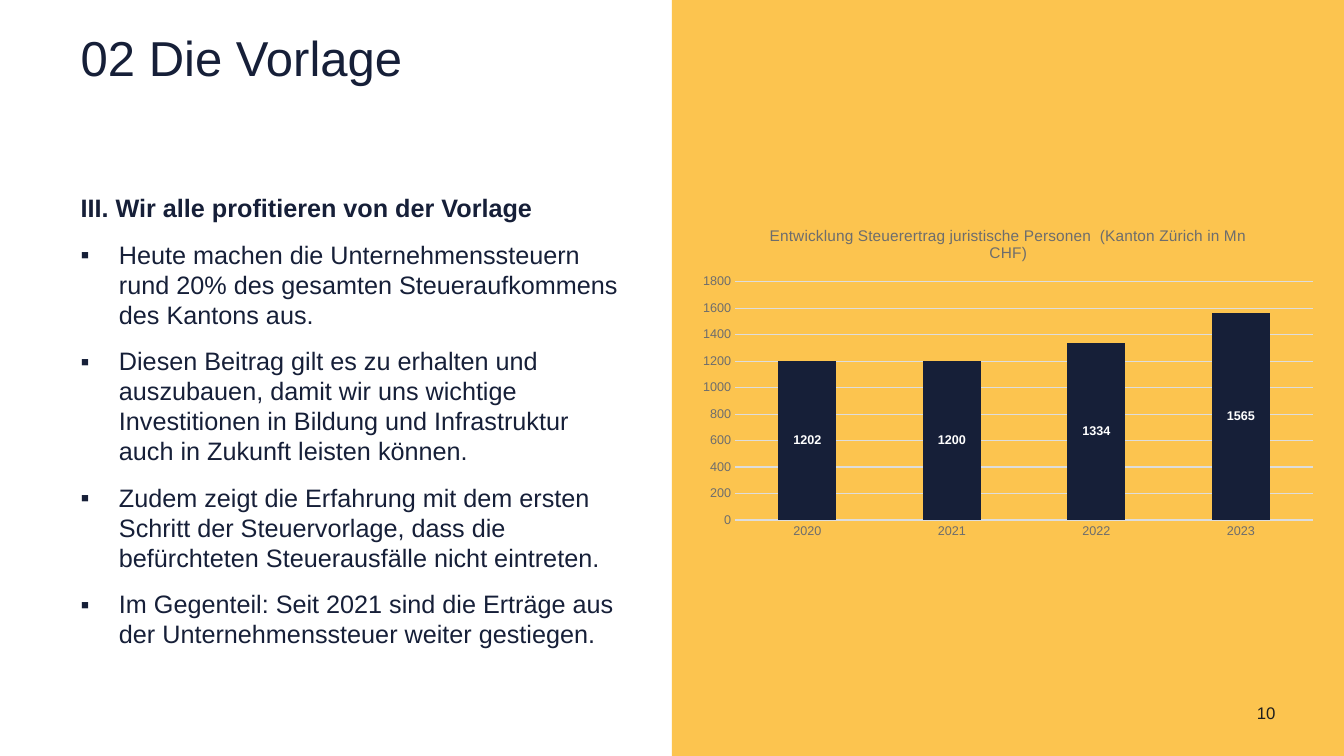
from lxml import etree
from pptx import Presentation
from pptx.chart.data import CategoryChartData
from pptx.dml.color import RGBColor
from pptx.enum.chart import XL_CHART_TYPE as ChartType, XL_LABEL_POSITION as LabelPos, XL_TICK_MARK as Tick
from pptx.enum.shapes import MSO_SHAPE as Preset
from pptx.enum.text import MSO_ANCHOR as Anchor, MSO_AUTO_SIZE as AutoSize, PP_ALIGN as Align
from pptx.oxml.ns import qn
from pptx.util import Inches, Pt

# Content
TITLE = "02 Die Vorlage"
HEADING = "III. Wir alle profitieren von der Vorlage"
ARGUMENTS = [
    "Heute machen die Unternehmenssteuern rund 20% des gesamten Steueraufkommens des Kantons aus.",
    "Diesen Beitrag gilt es zu erhalten und auszubauen, damit wir uns wichtige Investitionen "
    "in Bildung und Infrastruktur auch in Zukunft leisten können.",
    "Zudem zeigt die Erfahrung mit dem ersten Schritt der Steuervorlage, dass die "
    "befürchteten Steuerausfälle nicht eintreten.",
    "Im Gegenteil: Seit 2021 sind die Erträge aus der Unternehmenssteuer weiter gestiegen.",
]
PAGE_NUMBER = "10"
CHART_TITLE = "Entwicklung Steuerertrag juristische Personen  (Kanton Zürich in Mn CHF)"
TAX_REVENUE = {"2020": 1202, "2021": 1200, "2022": 1334, "2023": 1565}
PLOT_AREA = {"x": 0.07, "y": 0.215, "w": 0.91, "h": 0.71}  # shares of the chart

# Style
FONT = "Arial"
NAVY, YELLOW, WHITE = "161F38", "FCC44F", "FFFFFF"
BLACK, GREY, LIGHT = "1E1E1E", "6D6D6D", "DDDDDD"
WIDTH, HEIGHT = 13.33, 7.5
INDENT = Inches(0.38)


def paint(fill, color):
    fill.solid()
    fill.fore_color.rgb = RGBColor.from_string(color)


def style(font, size, color, bold=False):
    font.name, font.size, font.bold = FONT, Pt(size), bold
    font.color.rgb = RGBColor.from_string(color)


def place(shape, left, top, width, height):
    shape.left, shape.top = Inches(left), Inches(top)
    shape.width, shape.height = Inches(width), Inches(height)


def prepare(frame):
    frame.margin_left = frame.margin_right = frame.margin_top = frame.margin_bottom = 0
    frame.word_wrap = True
    frame.auto_size = AutoSize.NONE
    frame.vertical_anchor = Anchor.TOP
    return frame


def write(paragraph, text, size, color, bold=False, spacing=0.99, align=Align.LEFT):
    paragraph.alignment, paragraph.line_spacing = align, spacing
    run = paragraph.add_run()
    run.text = text
    style(run.font, size, color, bold)


def add_bullet(paragraph):
    props = paragraph._p.get_or_add_pPr()
    props.set("marL", str(INDENT))
    props.set("indent", str(-INDENT))
    etree.SubElement(props, qn("a:buFont")).set("typeface", FONT)
    etree.SubElement(props, qn("a:buChar")).set("char", "▪")


def set_plot_area(chart):
    plot_area = chart._chartSpace.chart.plotArea
    for old in plot_area.findall(qn("c:layout")):
        plot_area.remove(old)
    layout = etree.Element(qn("c:layout"))
    plot_area.insert(0, layout)
    manual = etree.SubElement(layout, qn("c:manualLayout"))
    settings = {"layoutTarget": "inner", "xMode": "edge", "yMode": "edge", **PLOT_AREA}
    for name, value in settings.items():
        etree.SubElement(manual, qn(f"c:{name}")).set("val", str(value))


prs = Presentation()
prs.slide_width, prs.slide_height = Inches(WIDTH), Inches(HEIGHT)
slide = prs.slides.add_slide(prs.slide_layouts[5])
shapes = slide.shapes

# Yellow right half, behind everything else
panel = shapes.add_shape(Preset.RECTANGLE, Inches(WIDTH / 2), 0, Inches(WIDTH / 2), Inches(HEIGHT))
panel.shadow.inherit = False
paint(panel.fill, YELLOW)
panel.line.fill.background()
shapes._spTree.insert(2, panel._element)

# Title
place(shapes.title, 0.8, 0.32, 10.74, 0.53)
write(prepare(shapes.title.text_frame).paragraphs[0], TITLE, 35, NAVY, spacing=0.95)

# Arguments
arguments = shapes.add_textbox(Inches(0.8), Inches(1.92), Inches(5.45), Inches(4.87))
frame = prepare(arguments.text_frame)
heading = frame.paragraphs[0]
heading.space_after = Pt(6)
write(heading, HEADING, 18, NAVY, bold=True)
for argument in ARGUMENTS:
    paragraph = frame.add_paragraph()
    add_bullet(paragraph)
    paragraph.space_before = paragraph.space_after = Pt(6)
    write(paragraph, argument, 18, NAVY)

# Page number
page = shapes.add_textbox(Inches(11.84), Inches(6.98), Inches(0.81), Inches(0.23))
write(prepare(page.text_frame).paragraphs[0], PAGE_NUMBER, 12, BLACK, align=Align.RIGHT)

# Tax revenue chart
data = CategoryChartData()
data.categories = list(TAX_REVENUE)
data.add_series("Series 1", list(TAX_REVENUE.values()))
chart = shapes.add_chart(ChartType.COLUMN_STACKED, Inches(6.85), Inches(2.08),
                         Inches(6.3), Inches(3.33), data).chart
style(chart.font, 10, BLACK)
chart.has_legend = False
chart.has_title = True
chart.chart_title.include_in_layout = False
write(chart.chart_title.text_frame.paragraphs[0], CHART_TITLE, 11, GREY,
      spacing=1.0, align=Align.CENTER)
set_plot_area(chart)

# Axes
years, amounts = chart.category_axis, chart.value_axis
for axis in (years, amounts):
    axis.major_tick_mark = axis.minor_tick_mark = Tick.NONE
    style(axis.tick_labels.font, 9, GREY)
amounts.minimum_scale, amounts.maximum_scale, amounts.major_unit = 0, 1800, 200
amounts.format.line.fill.background()
for line in (years.format.line, amounts.major_gridlines.format.line):
    paint(line.fill, LIGHT)
    line.width = Pt(0.75)

# Columns and their labels
columns = chart.plots[0]
columns.gap_width, columns.overlap = 150, 100
columns.vary_by_categories = False
revenue = columns.series[0]
paint(revenue.format.fill, NAVY)
labels = revenue.data_labels
labels.show_value = True
labels.position = LabelPos.CENTER
style(labels.font, 9, WHITE, bold=True)

prs.save("out.pptx")
